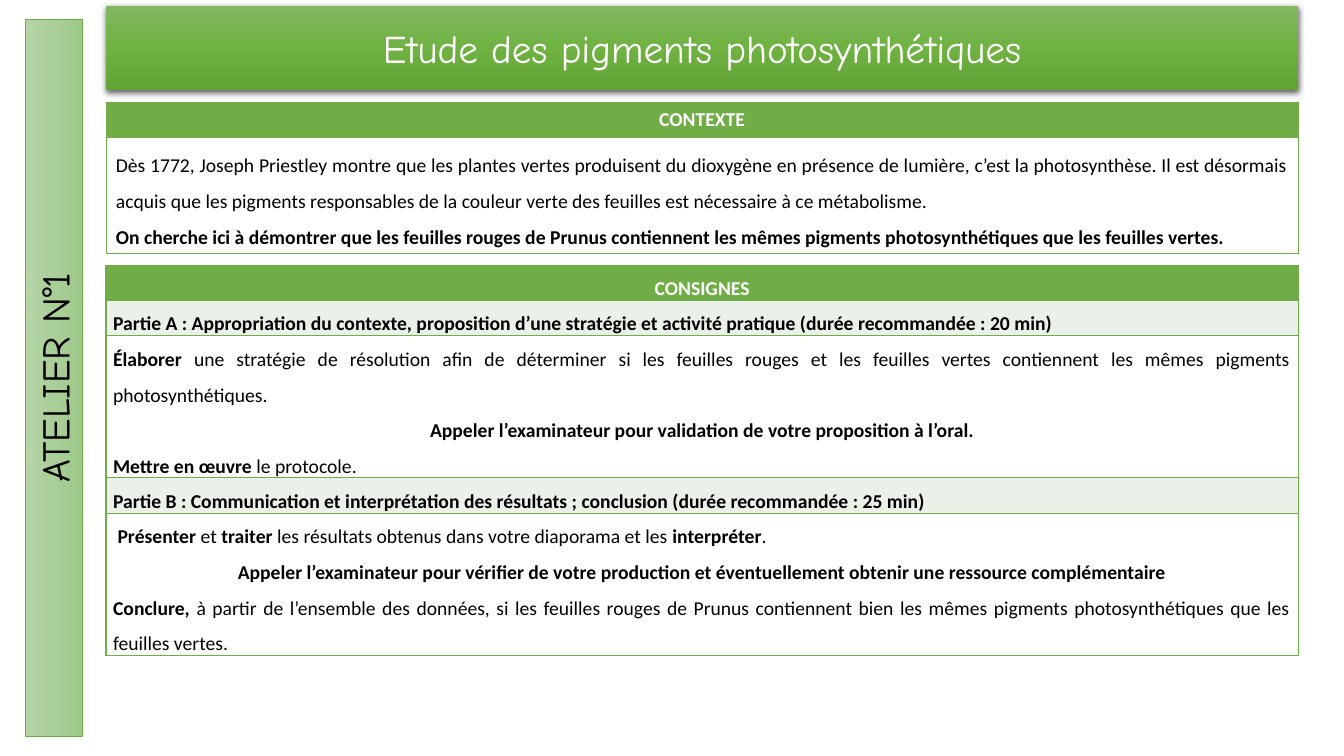
from lxml import etree
from pptx import Presentation
from pptx.dml.color import RGBColor
from pptx.enum.shapes import MSO_SHAPE
from pptx.enum.text import MSO_ANCHOR, MSO_AUTO_SIZE, PP_ALIGN
from pptx.oxml.ns import qn
from pptx.util import Cm, Pt

RECTANGLE = MSO_SHAPE.RECTANGLE
MIDDLE = MSO_ANCHOR.MIDDLE
GROW = MSO_AUTO_SIZE.SHAPE_TO_FIT_TEXT
CENTER = PP_ALIGN.CENTER
JUSTIFY = PP_ALIGN.JUSTIFY

GREEN = RGBColor(0x70, 0xAD, 0x47)
PALE_GREEN = RGBColor(0xEB, 0xF1, 0xE9)
WHITE = RGBColor(0xFF, 0xFF, 0xFF)
BLACK = RGBColor(0x00, 0x00, 0x00)
TITLE_GRADIENT = (RGBColor(0x81, 0xB8, 0x61), RGBColor(0x6F, 0xB2, 0x42), RGBColor(0x62, 0xA3, 0x36))
SIDEBAR_GRADIENT = (RGBColor(0xB5, 0xD5, 0xA7), RGBColor(0xAA, 0xCE, 0x9A), RGBColor(0x9C, 0xC9, 0x87))

BODY_FONT = "Calibri"
DISPLAY_FONT = "Comic Neue"
LEFT = Cm(2.67)
BANNER_HEIGHT = Cm(1.45)
TABLE_WIDTH = Cm(30.05)

CONTEXT_ROWS = [
    (0.86, GREEN, WHITE, 1.0, [(CENTER, "*CONTEXTE*")]),
    (2.93, WHITE, BLACK, 1.5, [
        (JUSTIFY, "Dès 1772, Joseph Priestley montre que les plantes vertes produisent du dioxygène en présence "
                  "de lumière, c’est la photosynthèse. Il est désormais acquis que les pigments responsables de la "
                  "couleur verte des feuilles est nécessaire à ce métabolisme."),
        (JUSTIFY, "*On cherche ici à démontrer que les feuilles rouges de Prunus contiennent les mêmes pigments "
                  "photosynthétiques que les feuilles vertes.*"),
    ]),
]
INSTRUCTION_ROWS = [
    (0.89, GREEN, WHITE, 1.5, [(CENTER, "*CONSIGNES*")]),
    (0.89, PALE_GREEN, BLACK, 1.5, [
        (JUSTIFY, "*Partie A : Appropriation du contexte, proposition d’une stratégie et activité pratique "
                  "(durée recommandée : 20 min)*"),
    ]),
    (3.58, WHITE, BLACK, 1.5, [
        (JUSTIFY, "*Élaborer *une stratégie de résolution afin de déterminer si les feuilles rouges et les feuilles "
                  "vertes contiennent les mêmes pigments photosynthétiques."),
        (CENTER, "*Appeler l’examinateur pour validation de votre proposition à l’oral.*"),
        (JUSTIFY, "*Mettre en œuvre *le protocole."),
    ]),
    (0.89, PALE_GREEN, BLACK, 1.5, [
        (JUSTIFY, "*Partie B : Communication et interprétation des résultats ; conclusion "
                  "(durée recommandée : 25 min)*"),
    ]),
    (3.58, WHITE, BLACK, 1.5, [
        (JUSTIFY, "* Présenter *et* traiter *les résultats obtenus dans votre diaporama et les *interpréter*."),
        (CENTER, "*Appeler l’examinateur pour vérifier de votre production et éventuellement obtenir une ressource "
                 "complémentaire*"),
        (JUSTIFY, "*Conclure, *à partir de l’ensemble des données, si les feuilles rouges de Prunus contiennent bien "
                  "les mêmes pigments photosynthétiques que les feuilles vertes."),
    ]),
]


def fill_gradient(shape, colors):
    shape.fill.gradient()
    shape.fill.gradient_angle = 270
    stops = shape.element.spPr.find(qn("a:gradFill")).find(qn("a:gsLst"))
    for stop in list(stops):
        stops.remove(stop)
    for index, color in enumerate(colors):
        stop = etree.SubElement(stops, qn("a:gs"), pos=str(index * 50000))
        etree.SubElement(stop, qn("a:srgbClr"), val=str(color))


def add_shadow(shape):
    effects = shape.element.spPr.find(qn("a:effectLst"))
    shadow = etree.SubElement(effects, qn("a:outerShdw"), blurRad=str(Pt(4.5)), dist=str(Pt(1.5)),
                              dir="5400000", algn="ctr", rotWithShape="0")
    color = etree.SubElement(shadow, qn("a:srgbClr"), val=str(BLACK))
    etree.SubElement(color, qn("a:alpha"), val="63000")


def format_banner(shape, text, colors, text_color):
    shape.shadow.inherit = False
    fill_gradient(shape, colors)
    text_frame = shape.text_frame
    text_frame.text = text
    text_frame.word_wrap = True
    text_frame.auto_size = GROW
    text_frame.vertical_anchor = MIDDLE
    paragraph = text_frame.paragraphs[0]
    paragraph.alignment = CENTER
    paragraph.line_spacing = 1.0
    font = paragraph.runs[0].font
    font.name, font.size, font.color.rgb = DISPLAY_FONT, Pt(28), text_color


def add_title(slide):
    title = slide.shapes.title
    title.left, title.top, title.width, title.height = LEFT, Cm(0.48), TABLE_WIDTH, BANNER_HEIGHT
    format_banner(title, "Etude des pigments photosynthétiques", TITLE_GRADIENT, WHITE)
    add_shadow(title)


def add_sidebar(slide):
    sidebar = slide.shapes.add_shape(RECTANGLE, Cm(-7.67), Cm(8.79), Cm(18.06), BANNER_HEIGHT)
    sidebar.rotation = 270
    format_banner(sidebar, "ATELIER N°1", SIDEBAR_GRADIENT, BLACK)
    sidebar.line.color.rgb = GREEN
    sidebar.line.width = Pt(0.5)


def add_borders(cell, width):
    properties = cell._tc.get_or_add_tcPr()
    for side in ("a:lnL", "a:lnR", "a:lnT", "a:lnB"):
        line = etree.SubElement(properties, qn(side), w=str(width))
        fill = etree.SubElement(line, qn("a:solidFill"))
        etree.SubElement(fill, qn("a:srgbClr"), val=str(GREEN))


def write_cell(cell, paragraphs, color, spacing):
    text_frame = cell.text_frame
    for index, (alignment, text) in enumerate(paragraphs):
        paragraph = text_frame.add_paragraph() if index else text_frame.paragraphs[0]
        paragraph.alignment = alignment
        paragraph.line_spacing = spacing
        for part, piece in enumerate(text.split("*")):
            if piece:
                run = paragraph.add_run()
                run.text = piece
                font = run.font
                font.name, font.size, font.color.rgb = BODY_FONT, Pt(14), color
                font.bold = part % 2 == 1


def add_text_table(slide, top, rows, border, side_margin, end_margin):
    height = Cm(sum(row[0] for row in rows))
    table = slide.shapes.add_table(len(rows), 1, LEFT, top, TABLE_WIDTH, height).table
    table.first_row = False
    table.horz_banding = False
    for index, (row_height, fill, color, spacing, paragraphs) in enumerate(rows):
        table.rows[index].height = Cm(row_height)
        cell = table.cell(index, 0)
        cell.margin_left = cell.margin_right = side_margin
        cell.margin_top = cell.margin_bottom = end_margin
        add_borders(cell, border)
        cell.fill.solid()
        cell.fill.fore_color.rgb = fill
        write_cell(cell, paragraphs, color, spacing)


def main():
    presentation = Presentation()
    presentation.slide_width = Cm(33.87)
    presentation.slide_height = Cm(19.05)
    slide = presentation.slides.add_slide(presentation.slide_layouts[5])
    add_title(slide)
    add_sidebar(slide)
    add_text_table(slide, Cm(2.59), CONTEXT_ROWS, Pt(0.5), Cm(0.25), Cm(0.13))
    add_text_table(slide, Cm(6.68), INSTRUCTION_ROWS, Pt(1), Cm(0.18), Cm(0))
    presentation.save("out.pptx")


if __name__ == "__main__":
    main()
